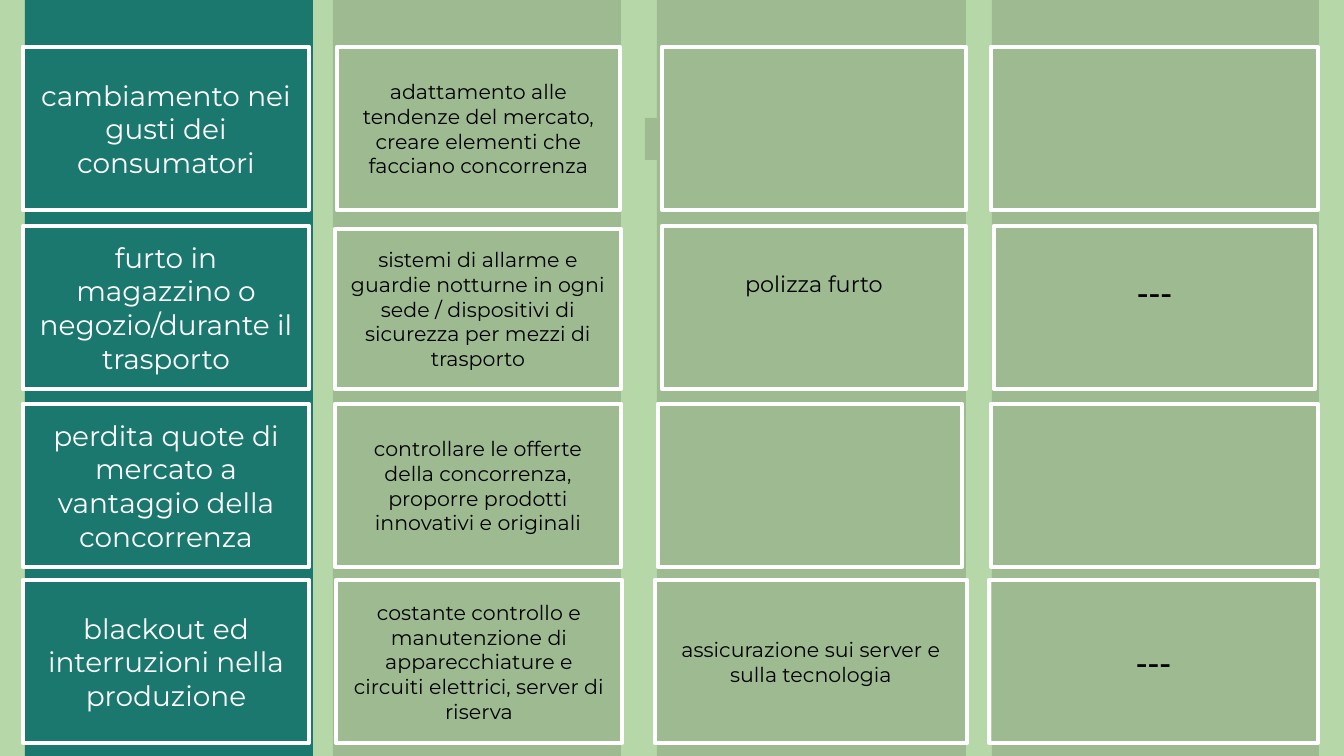
from pptx import Presentation
from pptx.dml.color import RGBColor
from pptx.enum.shapes import MSO_SHAPE
from pptx.enum.text import MSO_ANCHOR, PP_ALIGN
from pptx.util import Pt

RECT = MSO_SHAPE.RECTANGLE
TOP, MIDDLE = MSO_ANCHOR.TOP, MSO_ANCHOR.MIDDLE
CENTER = PP_ALIGN.CENTER

PX = 914400 / 134.4
WIDTH, HEIGHT = 1344, 756
LIGHT, SAGE, TEAL, WHITE, BLACK = "B6D7A8", "9EBA91", "1B786E", "FFFFFF", "000000"

# Background bands: left, top, width, height, colour
BANDS = [
    (25, 0, 288, HEIGHT, TEAL),
    (657, 0, 309, HEIGHT, SAGE),
    (645, 118, 94, 42, SAGE),
    (992, 0, 327, HEIGHT, SAGE),
    (333, 0, 288, HEIGHT, SAGE),
]

# Text styles
RISK = {"name": "Montserrat", "size": 15, "color": WHITE}
ACTION = {"name": "Montserrat", "size": 11, "color": BLACK}
POLICY = {"name": "Montserrat", "size": 12, "color": BLACK}
DASH = {"name": "Arial", "size": 19, "color": BLACK}

# Box columns, each cell from top to bottom: left, width, text, style
COLUMNS = [
    [
        (23, 286, "cambiamento nei gusti dei consumatori", RISK),
        (23, 286, "furto in magazzino o negozio/durante il trasporto", RISK),
        (23, 286, "perdita quote di mercato a vantaggio della concorrenza", RISK),
        (23, 286, "blackout ed interruzioni nella produzione", RISK),
    ],
    [
        (337, 283, "adattamento alle tendenze del mercato, creare elementi "
                   "che facciano concorrenza", ACTION),
        (335, 286, "sistemi di allarme e guardie notturne in ogni sede / dispositivi "
                   "di sicurezza per mezzi di trasporto", ACTION),
        (335, 286, "controllare le offerte della concorrenza, proporre prodotti "
                   "innovativi e originali", ACTION),
        (336, 286, "costante controllo e manutenzione di apparecchiature e circuiti "
                   "elettrici, server di riserva", ACTION),
    ],
    [
        (662, 304, "", ACTION),
        (662, 304, "polizza furto", POLICY),
        (658, 304, "", ACTION),
        (655, 312, "assicurazione sui server e sulla tecnologia", ACTION),
    ],
    [
        (991, 327, "", DASH),
        (994, 321, "---", DASH),
        (991, 327, "", DASH),
        (989, 329, "---", DASH),
    ],
]
ROW_TOPS = [47, 226, 404, 580]
BOX_H, INSET = 163, 13
SHORTENED = {(1, 1): 3}      # (column, row): px taken off the top
HIGH_TEXT = {(2, 1), (3, 1)}  # cells whose text hangs from the top
HIGH_INSET = 44


def px(n):
    return round(n * PX)


def rgb(value):
    return RGBColor.from_string(value)


def add_rect(slide, left, top, width, height, fill=None):
    sp = slide.shapes.add_shape(RECT, px(left), px(top), px(width), px(height))
    sp.shadow.inherit = False
    if fill:
        sp.fill.solid()
        sp.fill.fore_color.rgb = rgb(fill)
        sp.line.fill.background()
    else:
        sp.fill.background()
        sp.line.color.rgb = rgb(WHITE)
        sp.line.width = Pt(2.25)
    return sp


def add_text(sp, text, style, high):
    tf = sp.text_frame
    frame = {
        "word_wrap": True,
        "vertical_anchor": TOP if high else MIDDLE,
        "margin_left": px(INSET),
        "margin_right": px(INSET),
        "margin_top": px(HIGH_INSET if high else INSET),
        "margin_bottom": px(INSET),
    }
    for key, value in frame.items():
        setattr(tf, key, value)
    p = tf.paragraphs[0]
    p.alignment = CENTER
    r = p.add_run()
    r.text = text
    r.font.name = style["name"]
    r.font.size = Pt(style["size"])
    r.font.color.rgb = rgb(style["color"])


def main():
    prs = Presentation()
    prs.slide_width, prs.slide_height = px(WIDTH), px(HEIGHT)
    s = prs.slides.add_slide(prs.slide_layouts[6])
    s.background.fill.solid()
    s.background.fill.fore_color.rgb = rgb(LIGHT)

    # Bands
    for band in BANDS:
        add_rect(s, *band)

    # Outlined boxes
    for col, cells in enumerate(COLUMNS):
        for row, (left, width, text, style) in enumerate(cells):
            cut = SHORTENED.get((col, row), 0)
            sp = add_rect(s, left, ROW_TOPS[row] + cut, width, BOX_H - cut)
            if text:
                add_text(sp, text, style, (col, row) in HIGH_TEXT)

    prs.save("out.pptx")


if __name__ == "__main__":
    main()
